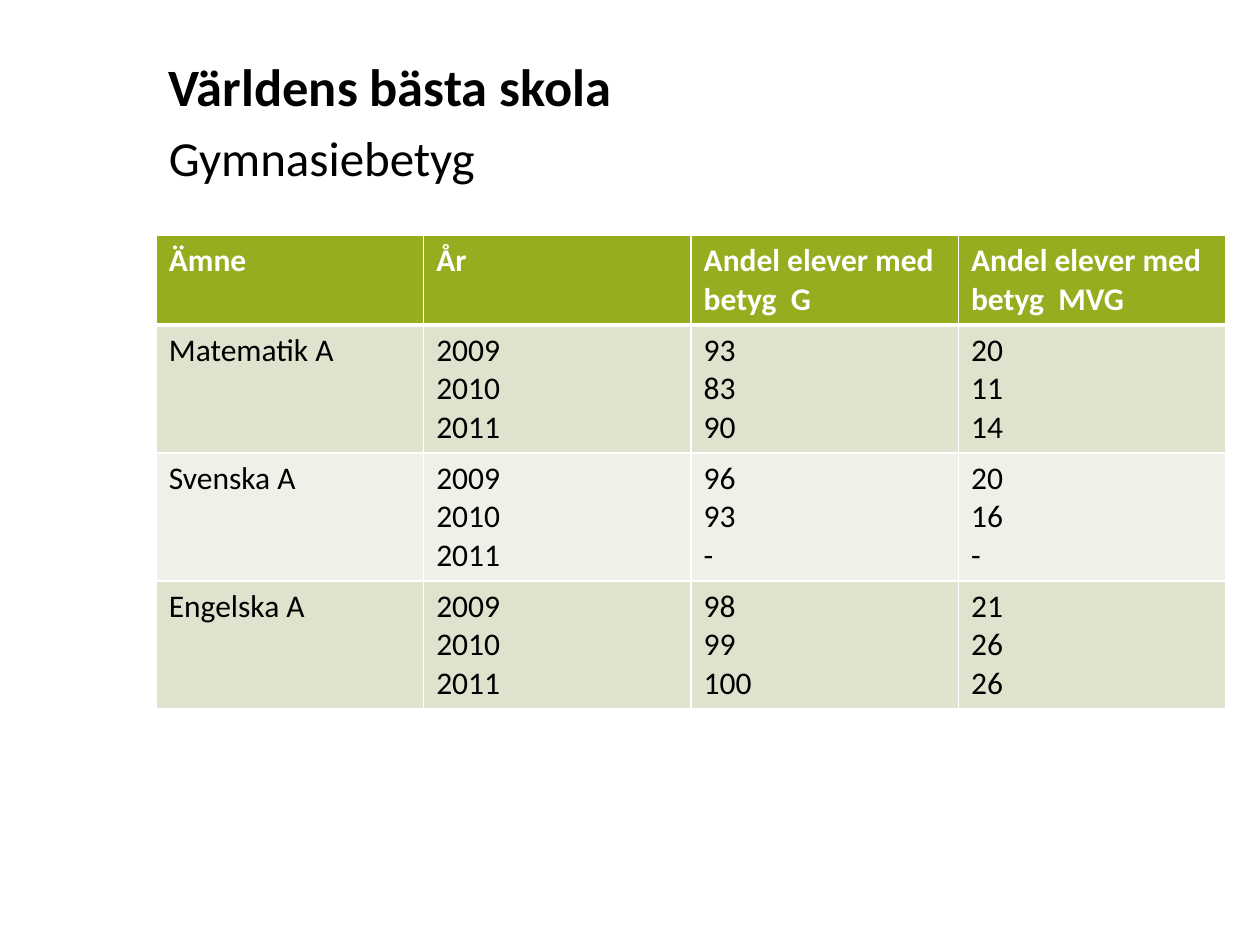
from dataclasses import dataclass

from lxml import etree
from pptx import Presentation
from pptx.dml.color import RGBColor
from pptx.enum.text import MSO_ANCHOR, MSO_AUTO_SIZE, PP_ALIGN
from pptx.oxml.ns import qn
from pptx.util import Inches, Pt

LEFT = PP_ALIGN.LEFT
MIDDLE = MSO_ANCHOR.MIDDLE
NO_AUTOFIT = MSO_AUTO_SIZE.NONE

# Content
HEADING = "Världens bästa skola"
SUBHEADING = "Gymnasiebetyg"
HEADERS = ["Ämne", "År", "Andel elever med betyg  G", "Andel elever med betyg  MVG"]
YEARS = ["2009", "2010", "2011"]
SUBJECTS = [
    ("Matematik A", ["93", "83", "90"], ["20", "11", "14"]),
    ("Svenska A", ["96", "93", "-"], ["20", "16", "-"]),
    ("Engelska A", ["98", "99", "100"], ["21", "26", "26"]),
]


@dataclass(frozen=True)
class Theme:
    font: str = "Calibri"
    text: str = "000000"
    header_text: str = "FFFFFF"
    header_fill: str = "97AC1E"
    bands: tuple = ("DDE3CD", "EFF1E8")
    border: str = "FFFFFF"
    heading_size: int = 30
    subheading_size: int = 28
    table_size: int = 18
    title_line: int = 40


THEME = Theme()

# Layout in inches
CONTENT_LEFT, CONTENT_WIDTH = 1.24, 8.49
TITLE_TOP, TITLE_HEIGHT = 0.3, 1.25
TABLE_TOP = 1.87
HEADER_HEIGHT, BODY_HEIGHT = 0.7, 1.01


def format_font(font, size, color, bold):
    font.name = THEME.font
    font.size = Pt(size)
    font.bold = bold
    font.color.rgb = RGBColor.from_string(color)


def add_borders(cell, bottom_width, top_width):
    properties = cell._tc.get_or_add_tcPr()
    for side, width in (("L", 1), ("R", 1), ("T", top_width), ("B", bottom_width)):
        line = etree.SubElement(properties, qn(f"a:ln{side}"), w=str(Pt(width)))
        fill = etree.SubElement(line, qn("a:solidFill"))
        etree.SubElement(fill, qn("a:srgbClr"), val=THEME.border)


def fill_cell(cell, lines, row):
    is_header = row == 0
    add_borders(cell, 3 if is_header else 1, 3 if row == 1 else 1)
    cell.fill.solid()
    fill = THEME.header_fill if is_header else THEME.bands[(row - 1) % 2]
    cell.fill.fore_color.rgb = RGBColor.from_string(fill)
    cell.text_frame.text = "\n".join(lines)
    color = THEME.header_text if is_header else THEME.text
    for para in cell.text_frame.paragraphs:
        for span in para.runs:
            format_font(span.font, THEME.table_size, color, is_header)


def add_title(slide):
    title = slide.shapes.title
    title.left, title.top = Inches(CONTENT_LEFT), Inches(TITLE_TOP)
    title.width, title.height = Inches(CONTENT_WIDTH), Inches(TITLE_HEIGHT)
    frame = title.text_frame
    frame.auto_size = NO_AUTOFIT
    frame.vertical_anchor = MIDDLE
    frame.text = f"{HEADING}\v{SUBHEADING}"
    para = frame.paragraphs[0]
    para.alignment = LEFT
    para.line_spacing = Pt(THEME.title_line)
    heading, subheading = para.runs
    format_font(heading.font, THEME.heading_size, THEME.text, True)
    format_font(subheading.font, THEME.subheading_size, THEME.text, False)


def add_grades(slide):
    rows = [[[header] for header in HEADERS]]
    rows += [[[subject], YEARS, passed, top] for subject, passed, top in SUBJECTS]
    heights = [HEADER_HEIGHT] + [BODY_HEIGHT] * len(SUBJECTS)
    table = slide.shapes.add_table(
        len(rows), len(HEADERS), Inches(CONTENT_LEFT), Inches(TABLE_TOP),
        Inches(CONTENT_WIDTH), Inches(sum(heights)),
    ).table
    for column in table.columns:
        column.width = Inches(CONTENT_WIDTH / len(HEADERS))
    for row, (cells, height) in enumerate(zip(rows, heights)):
        table.rows[row].height = Inches(height)
        for column, lines in enumerate(cells):
            fill_cell(table.cell(row, column), lines, row)


def main():
    deck = Presentation()
    deck.slide_width, deck.slide_height = Inches(10), Inches(7.5)
    page = deck.slides.add_slide(deck.slide_layouts[5])
    add_title(page)
    add_grades(page)
    deck.save("out.pptx")


if __name__ == "__main__":
    main()
